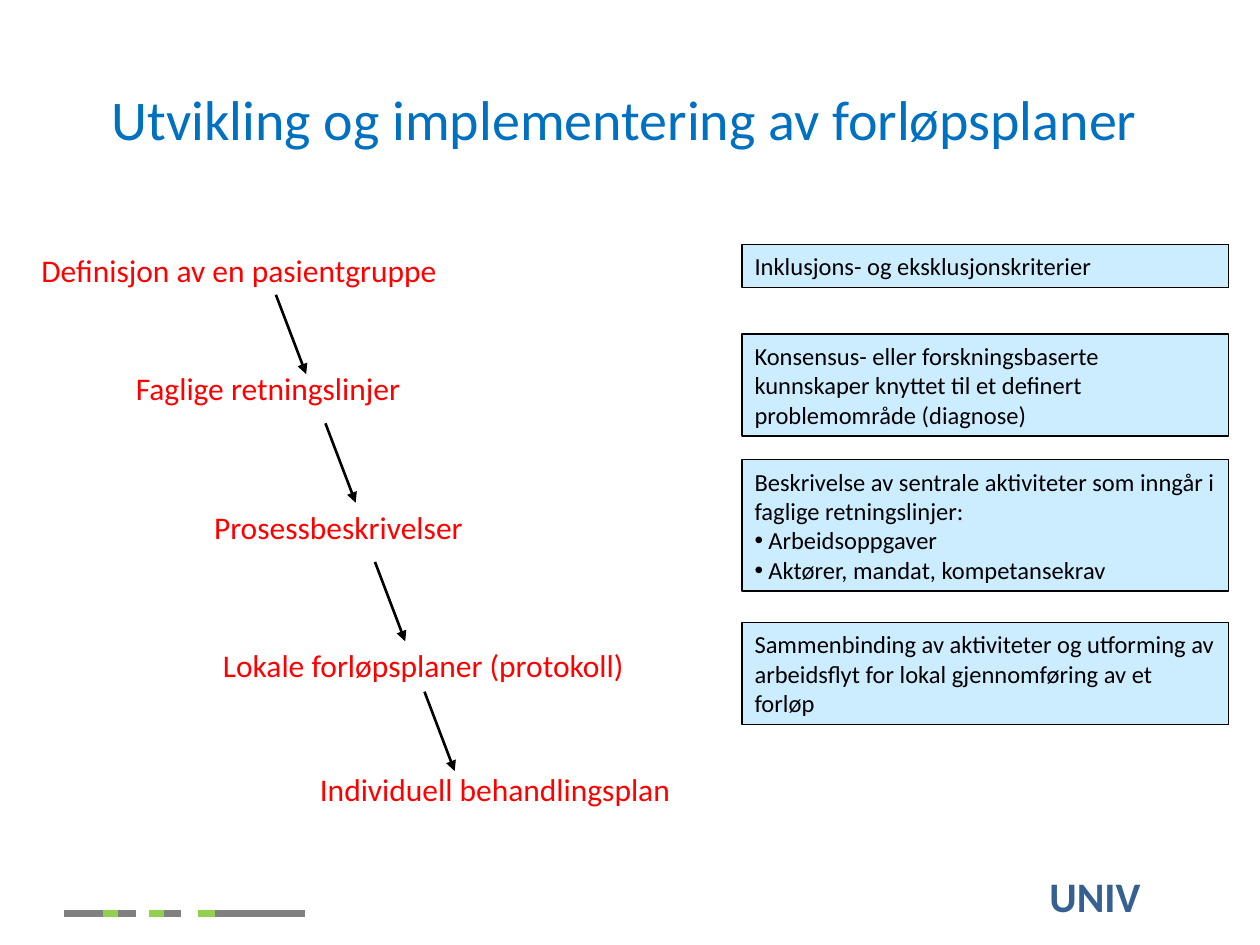
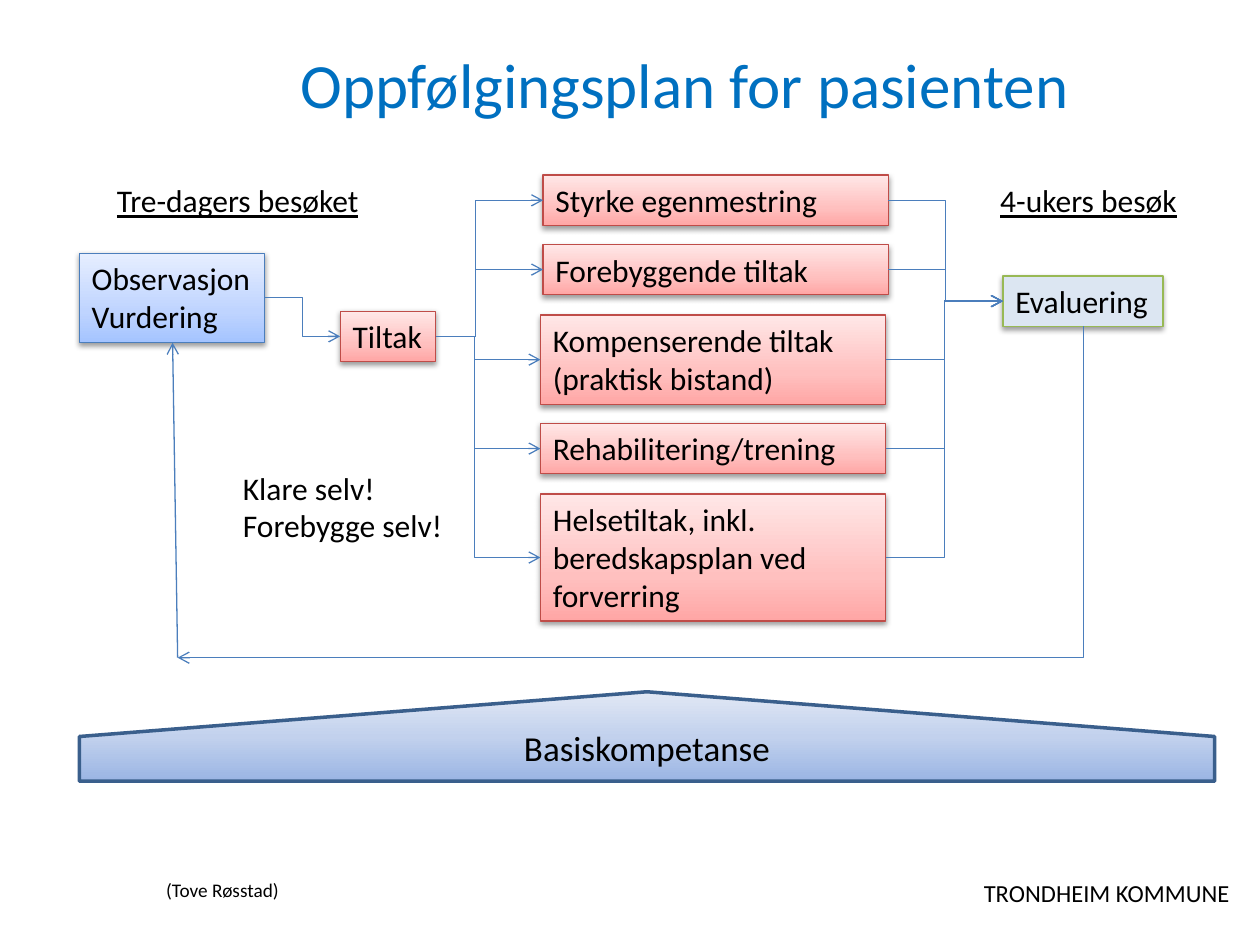
from lxml.etree import SubElement
from pptx import Presentation
from pptx.dml.color import RGBColor
from pptx.enum.shapes import MSO_CONNECTOR, MSO_SHAPE
from pptx.enum.text import MSO_ANCHOR, MSO_AUTO_SIZE, PP_ALIGN
from pptx.oxml.ns import qn
from pptx.util import Inches, Pt

FONT = "Calibri"
BLACK = "000000"
TITLE_BLUE = "0070C0"
STEP_RED = "FF0000"
NOTE_BLUE = "CCECFF"
WORDMARK_BLUE = "376092"
BAR_GREEN = "92D050"
BAR_GREY = "808080"
FLOW_BLUE = "4B7EBC"
MEASURE_RED = "BF4C48"
BLUE_BLEND = [(0, "A4C4FF"), (35, "BFD4FF"), (100, "E6EEFF")]
RED_BLEND = [(0, "FFA6A5"), (35, "FFC0BF"), (100, "FFE7E7")]
BASE_BLEND = [(0, "9AB5E4"), (50, "C2D1ED"), (100, "E1E8F5")]


def color(value):
    return RGBColor.from_string(value)


def add_span(para, text, size, ink, bold, underline):
    span = para.add_run()
    span.text = text
    span.font.name = FONT
    span.font.size = Pt(size)
    span.font.color.rgb = color(ink)
    span.font.bold = bold
    span.font.underline = underline


def write(box, text, size, ink=BLACK, bold=False, underline=False,
          align=PP_ALIGN.LEFT, anchor=MSO_ANCHOR.TOP, wrap=True, grow=True):
    frame = box.text_frame
    frame.word_wrap = wrap
    frame.vertical_anchor = anchor
    frame.auto_size = MSO_AUTO_SIZE.SHAPE_TO_FIT_TEXT if grow else MSO_AUTO_SIZE.NONE
    para = frame.paragraphs[0]
    para.alignment = align
    for index, row in enumerate(text.split("\n")):
        if index:
            para.add_line_break()
        add_span(para, row, size, ink, bold, underline)


def add_text(page, left, top, width, height, text, size, **style):
    box = page.shapes.add_textbox(Inches(left), Inches(top), Inches(width), Inches(height))
    write(box, text, size, **style)


def add_title(page, left, top, width, text, size):
    add_text(page, left, top, width, 0.9, text, size, ink=TITLE_BLUE,
             align=PP_ALIGN.CENTER, anchor=MSO_ANCHOR.MIDDLE, grow=False)


def add_box(page, kind, left, top, width, height, line, weight=0.75):
    box = page.shapes.add_shape(kind, Inches(left), Inches(top), Inches(width), Inches(height))
    box.shadow.inherit = False
    box.line.color.rgb = color(line)
    box.line.width = Pt(weight)
    return box


def fill_solid(box, value):
    box.fill.solid()
    box.fill.fore_color.rgb = color(value)


def fill_blend(box, stops, angle):
    box.fill.gradient()
    blend = box.element.spPr.find(qn("a:gradFill"))
    blend.set("rotWithShape", "1")
    for child in list(blend):
        blend.remove(child)
    stop_list = SubElement(blend, qn("a:gsLst"))
    for position, value in stops:
        stop = SubElement(stop_list, qn("a:gs"), pos=str(position * 1000))
        SubElement(stop, qn("a:srgbClr"), val=value)
    SubElement(blend, qn("a:lin"), ang=str(angle * 60000), scaled="0")


def add_shadow(box):
    effects = box.element.spPr.find(qn("a:effectLst"))
    shadow = SubElement(effects, qn("a:outerShdw"), blurRad=str(Pt(3.1)), dist=str(Pt(1.6)),
                        dir="5400000", rotWithShape="0")
    tone = SubElement(shadow, qn("a:srgbClr"), val=BLACK)
    SubElement(tone, qn("a:alpha"), val="38000")


def add_note(page, top, height, text, bullets=()):
    box = add_box(page, MSO_SHAPE.RECTANGLE, 5.89, top, 3.86, height, BLACK)
    fill_solid(box, NOTE_BLUE)
    write(box, text, 14, anchor=MSO_ANCHOR.MIDDLE)
    for bullet in bullets:
        para = box.text_frame.add_paragraph()
        para.alignment = PP_ALIGN.LEFT
        add_span(para, bullet, 14, BLACK, False, False)
        settings = para._p.get_or_add_pPr()
        settings.set("marL", str(Inches(0.11)))
        settings.set("indent", str(-Inches(0.11)))
        SubElement(settings, qn("a:buFont"), typeface="Arial")
        SubElement(settings, qn("a:buChar"), char="•")


def add_flow_box(page, left, top, width, height, text, blend=None, line=MEASURE_RED, wrap=True):
    box = add_box(page, MSO_SHAPE.RECTANGLE, left, top, width, height, line)
    if blend:
        fill_blend(box, blend, 270)
    else:
        fill_solid(box, "DCE6F2")
    add_shadow(box)
    write(box, text, 18, wrap=wrap)


def add_line(page, start, end, ink, weight, head=None, kind=MSO_CONNECTOR.STRAIGHT):
    points = [Inches(value) for value in (*start, *end)]
    line = page.shapes.add_connector(kind, *points)
    line.line.color.rgb = color(ink)
    line.line.width = Pt(weight)
    outline = line.element.spPr.find(qn("a:ln"))
    if head:
        SubElement(outline, qn("a:tailEnd"), type=head)
    SubElement(line.element.spPr, qn("a:effectLst"))
    return line


def add_elbow(page, start, end, bend=0.5):
    line = add_line(page, start, end, FLOW_BLUE, 0.75, "arrow", MSO_CONNECTOR.ELBOW)
    guides = line.element.spPr.find(qn("a:prstGeom")).get_or_add_avLst()
    SubElement(guides, qn("a:gd"), name="adj1", fmla=f"val {round(bend * 100000)}")


def add_return_path(page, start, end):
    center_x, center_y = (start[0] + end[0]) / 2, (start[1] + end[1]) / 2
    half_drop, half_run = (end[1] - start[1]) / 2, (start[0] - end[0]) / 2
    line = add_line(page, (center_x - half_drop, center_y - half_run),
                    (center_x + half_drop, center_y + half_run),
                    FLOW_BLUE, 0.75, "arrow", MSO_CONNECTOR.ELBOW)
    line.element.spPr.find(qn("a:prstGeom")).set("prst", "bentConnector2")
    line.element.spPr.find(qn("a:xfrm")).set("rot", "5400000")


def add_color_bar(page):
    segments = [(0.82, 0.96, BAR_GREEN), (0.51, 0.82, BAR_GREY), (1.71, 2.42, BAR_GREY),
                (0.94, 1.08, BAR_GREY), (1.18, 1.32, BAR_GREEN), (1.3, 1.44, BAR_GREY),
                (1.57, 1.71, BAR_GREEN)]
    for left, right, ink in segments:
        add_line(page, (left, 7.25), (right, 7.25), ink, 3.75)


def build_development(page):
    add_title(page, 0.4, 0.49, 9.12, "Utvikling og implementering av forløpsplaner", 32)
    steps = [(0.23, 1.94, 3.38, "Definisjon av en pasientgruppe"),
             (0.98, 2.88, 2.33, "Faglige retningslinjer"),
             (1.6, 3.98, 2.19, "Prosessbeskrivelser"),
             (1.67, 5.08, 3.42, "Lokale forløpsplaner (protokoll)"),
             (2.44, 6.06, 3.02, "Individuell behandlingsplan")]
    for left, top, width, text in steps:
        add_text(page, left, top, width, 0.4, text, 18, ink=STEP_RED, wrap=False)

    add_note(page, 1.94, 0.34, "Inklusjons- og eksklusjonskriterier")
    add_note(page, 2.65, 0.81, "Konsensus- eller forskningsbaserte kunnskaper knyttet til "
                               "et definert problemområde (diagnose)")
    add_note(page, 3.65, 1.04, "Beskrivelse av sentrale aktiviteter som inngår i "
                               "faglige retningslinjer:",
             ["Arbeidsoppgaver", "Aktører, mandat, kompetansekrav"])
    add_note(page, 4.94, 0.81, "Sammenbinding av aktiviteter og utforming av arbeidsflyt "
                               "for lokal gjennomføring av et forløp")

    for index, top in enumerate([2.34, 3.36, 4.46, 5.49]):
        left = 2.19 + index * 0.393
        add_line(page, (left, top), (left + 0.24, top + 0.63), BLACK, 1.5, "triangle")

    add_color_bar(page)
    add_text(page, 8.23, 6.86, 1.22, 0.5, "UNIV", 24, ink=WORDMARK_BLUE, bold=True, wrap=False)


def build_follow_up(page):
    add_title(page, 1.45, 0.21, 8.08, "Oppfølgingsplan for pasienten ", 36)
    add_text(page, 0.83, 1.39, 2.29, 0.4, "Tre-dagers besøket", 18, underline=True)
    add_text(page, 7.84, 1.39, 1.64, 0.4, "4-ukers besøk", 18, underline=True)
    add_text(page, 1.83, 3.67, 1.8, 0.71, "Klare selv!\nForebygge selv!", 18, wrap=False)

    add_flow_box(page, 0.63, 2.01, 1.47, 0.71, "Observasjon\nVurdering",
                 BLUE_BLEND, FLOW_BLUE, wrap=False)
    add_flow_box(page, 2.7, 2.47, 0.76, 0.4, "Tiltak", RED_BLEND, wrap=False)
    add_flow_box(page, 7.96, 2.19, 1.27, 0.4, "Evaluering", line="98B955", wrap=False)
    add_elbow(page, (2.1, 2.36), (2.7, 2.67))

    width = 2.74
    measures = [(4.31, 1.39, 0.4, "Styrke egenmestring"),
                (4.31, 1.94, 0.4, "Forebyggende tiltak"),
                (4.29, 2.5, 0.71, "Kompenserende tiltak\n(praktisk bistand)"),
                (4.29, 3.36, 0.4, "Rehabilitering/trening"),
                (4.29, 3.92, 1.01, "Helsetiltak, inkl. beredskapsplan ved forverring")]
    for left, top, height, text in measures:
        add_flow_box(page, left, top, width, height, text, RED_BLEND)
        middle = top + height / 2
        add_elbow(page, (3.46, 2.67), (left, middle), 0.37)
        add_elbow(page, (left + width, middle), (7.96, 2.39))

    add_return_path(page, (8.6, 2.59), (1.41, 5.22))
    add_line(page, (1.41, 5.22), (1.37, 2.72), FLOW_BLUE, 0.75, "arrow")

    base = add_box(page, MSO_SHAPE.PENTAGON, 4.78, 1.34, 0.71, 9.01, "3A5F8C", 2)
    base.rotation = 270
    fill_blend(base, BASE_BLEND, 0)
    write(base, "Basiskompetanse", 20, align=PP_ALIGN.CENTER,
          anchor=MSO_ANCHOR.MIDDLE, grow=False)
    base.text_frame._txBody.bodyPr.set("vert", "vert")

    add_text(page, 1.22, 6.92, 1.13, 0.29, "(Tove Røsstad)", 11, wrap=False)
    add_text(page, 7.71, 6.92, 2.33, 0.58, "TRONDHEIM KOMMUNE", 14, grow=False)


def main():
    deck = Presentation()
    deck.slide_width = Inches(10)
    deck.slide_height = Inches(7.5)
    for build in (build_development, build_follow_up):
        build(deck.slides.add_slide(deck.slide_layouts[6]))
    deck.save("out.pptx")


if __name__ == "__main__":
    main()
